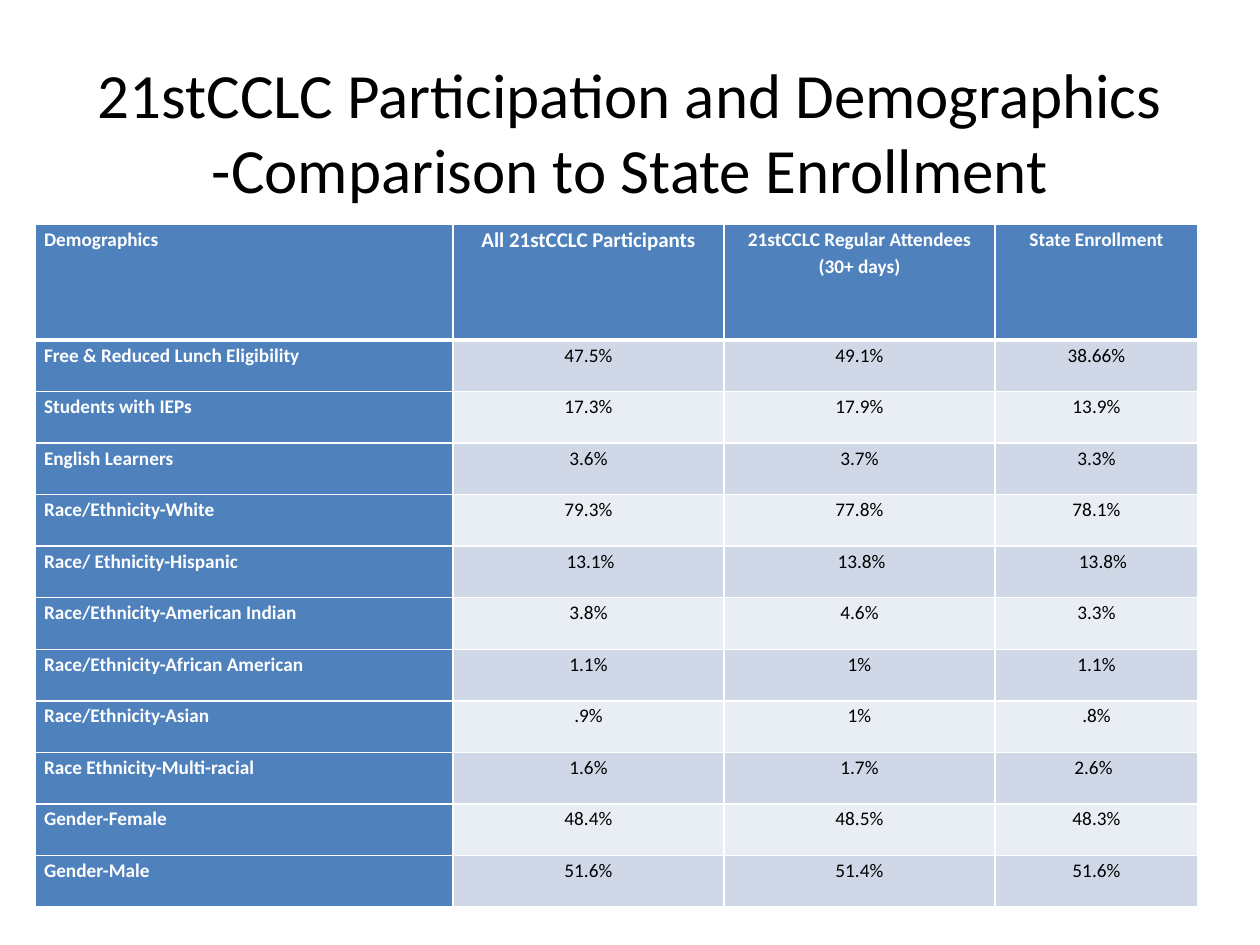
from lxml import etree
from pptx import Presentation
from pptx.dml.color import RGBColor
from pptx.enum.text import MSO_ANCHOR, PP_ALIGN
from pptx.oxml.ns import qn
from pptx.util import Pt

SCALE = 914400 / 126
LEFT, CENTER = PP_ALIGN.LEFT, PP_ALIGN.CENTER
MIDDLE, TOP = MSO_ANCHOR.MIDDLE, MSO_ANCHOR.TOP
FONT = "Calibri"
COLORS = {"black": "000000", "white": "FFFFFF", "head": "4F81BD",
          "odd": "D0D8E8", "even": "E9EDF4"}

TITLE = "21stCCLC Participation and Demographics -Comparison to State Enrollment"
ROWS = [
    ("Demographics", "All 21stCCLC Participants",
     "21stCCLC Regular Attendees (30+ days)", "State Enrollment"),
    ("Free & Reduced Lunch Eligibility", "47.5%", "49.1%", "38.66%"),
    ("Students with IEPs", "17.3%", "17.9%", "13.9%"),
    ("English Learners", "3.6%", "3.7%", "3.3%"),
    ("Race/Ethnicity-White", "79.3%", "77.8%", "78.1%"),
    ("Race/ Ethnicity-Hispanic", "13.1%", "13.8%", "13.8%"),
    ("Race/Ethnicity-American Indian", "3.8%", "4.6%", "3.3%"),
    ("Race/Ethnicity-African American", "1.1%", "1%", "1.1%"),
    ("Race/Ethnicity-Asian", ".9%", "1%", ".8%"),
    ("Race Ethnicity-Multi-racial", "1.6%", "1.7%", "2.6%"),
    ("Gender-Female", "48.4%", "48.5%", "48.3%"),
    ("Gender-Male", "51.6%", "51.4%", "51.6%"),
]
WIDTHS = [418, 271, 271, 203]
HEAD_H, BODY_H = 116, 567
PAD = 9
NUDGE = {(5, 1): 4, (5, 2): 4, (5, 3): 13, (9, 3): -6}


def px(n):
    return round(n * SCALE)


def rgb(name):
    return RGBColor.from_string(COLORS[name])


def style(para, size, color, align, bold=False):
    para.alignment = align
    font = para.font
    font.name, font.size, font.bold = FONT, Pt(size), bold
    font.color.rgb = rgb(color)


def add_title(slide):
    box = slide.shapes.add_textbox(px(63), px(38), px(1134), px(186))
    frame = box.text_frame
    frame.word_wrap = True
    frame.vertical_anchor = MIDDLE
    frame.text = TITLE
    style(frame.paragraphs[0], 36, "black", CENTER)


def set_edges(cell, row):
    props = cell._tc.get_or_add_tcPr()
    widths = {"a:lnL": 1, "a:lnR": 1, "a:lnT": 3 if row == 1 else 1,
              "a:lnB": 3 if row == 0 else 1}
    for i, (tag, width) in enumerate(widths.items()):
        line = etree.Element(qn(tag), w=str(Pt(width)))
        fill = etree.SubElement(line, qn("a:solidFill"))
        etree.SubElement(fill, qn("a:srgbClr"), val=COLORS["white"])
        props.insert(i, line)


def fill_cell(cell, text, row, col):
    head = row == 0 or col == 0
    shade = "head" if head else "odd" if row % 2 else "even"
    cell.fill.solid()
    cell.fill.fore_color.rgb = rgb(shade)
    cell.margin_left = px(PAD + NUDGE.get((row, col), 0))
    cell.margin_right = px(PAD)
    cell.margin_top = cell.margin_bottom = 0
    cell.vertical_anchor = TOP
    cell.text = text
    para = cell.text_frame.paragraphs[0]
    para.line_spacing = 1.15
    style(para, 12 if (row, col) == (0, 1) else 11,
          "white" if head else "black", CENTER if col else LEFT, head)
    set_edges(cell, row)


def add_grid(slide):
    count = len(ROWS)
    frame = slide.shapes.add_table(count, len(WIDTHS), px(35), px(224),
                                   px(sum(WIDTHS)), px(HEAD_H + BODY_H))
    table = frame.table
    for col, width in zip(table.columns, WIDTHS):
        col.width = px(width)
    for r, texts in enumerate(ROWS):
        table.rows[r].height = px(BODY_H / (count - 1) if r else HEAD_H)
        for c, text in enumerate(texts):
            fill_cell(table.cell(r, c), text, r, c)


def main():
    deck = Presentation()
    deck.slide_width, deck.slide_height = px(1260), px(945)
    slide = deck.slides.add_slide(deck.slide_layouts[6])
    add_title(slide)
    add_grid(slide)
    deck.save("out.pptx")


if __name__ == "__main__":
    main()
